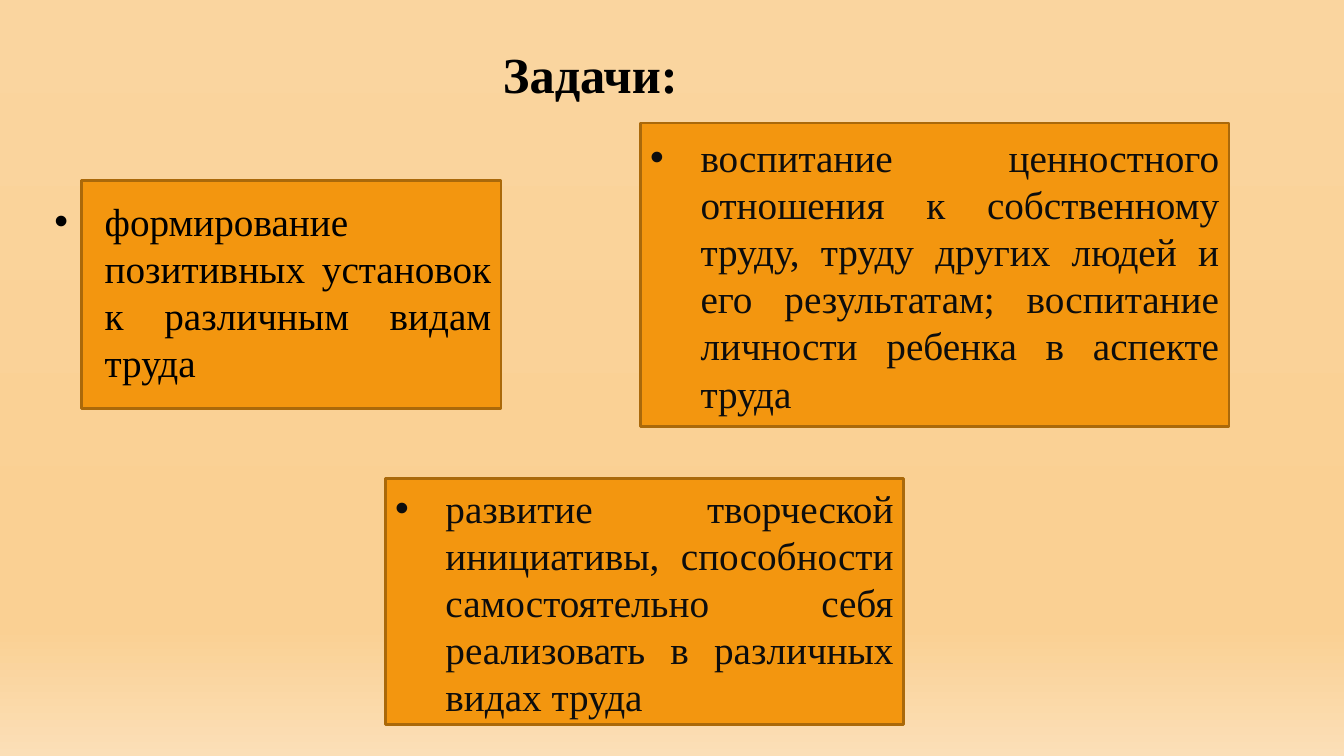
from lxml.etree import SubElement
from pptx import Presentation
from pptx.dml.color import RGBColor
from pptx.enum.shapes import MSO_SHAPE
from pptx.enum.text import MSO_ANCHOR, MSO_AUTO_SIZE, PP_ALIGN
from pptx.oxml.ns import qn
from pptx.util import Inches, Pt


def rgb(value):
    return RGBColor.from_string(value)


class Deck:
    font = "Times New Roman"
    box_fill = "F3960F"
    box_line = "AA690A"
    body_size = 28
    title_size = 36
    indent = 0.5

    def __init__(self, width, height):
        self.prs = Presentation()
        self.prs.slide_width = Inches(width)
        self.prs.slide_height = Inches(height)
        self.s = self.prs.slides.add_slide(self.prs.slide_layouts[6])

    def background(self, stops):
        fill = self.s.background.fill
        fill.gradient()
        fill.gradient_angle = 270
        gs_list = next(self.s.background._cSld.iter(qn("a:gsLst")))
        for gs in list(gs_list):
            gs_list.remove(gs)
        for percent, color in stops:
            gs = SubElement(gs_list, qn("a:gs"), pos=str(percent * 1000))
            SubElement(gs, qn("a:srgbClr"), val=color)

    def box(self, left, top, width, height):
        sp = self.s.shapes.add_shape(
            MSO_SHAPE.RECTANGLE, Inches(left), Inches(top), Inches(width), Inches(height))
        sp.shadow.inherit = False
        sp.fill.solid()
        sp.fill.fore_color.rgb = rgb(self.box_fill)
        sp.line.color.rgb = rgb(self.box_line)
        sp.line.width = Pt(2)
        sp.text_frame.vertical_anchor = MSO_ANCHOR.MIDDLE
        return sp

    def text_box(self, left, top, width, height):
        sp = self.s.shapes.add_textbox(
            Inches(left), Inches(top), Inches(width), Inches(height))
        sp.text_frame.auto_size = MSO_AUTO_SIZE.SHAPE_TO_FIT_TEXT
        return sp

    def run(self, p, text, size, color, bold=False):
        r = p.add_run()
        r.text = text
        r.font.name = self.font
        r.font.size = Pt(size)
        r.font.bold = bold
        r.font.color.rgb = rgb(color)

    def title(self, sp, text):
        tf = sp.text_frame
        tf.word_wrap = True
        self.run(tf.paragraphs[0], text, self.title_size, "000000", True)

    def bullet(self, sp, text, color):
        tf = sp.text_frame
        tf.word_wrap = True
        p = tf.paragraphs[0]
        p.alignment = PP_ALIGN.JUSTIFY
        pPr = p._p.get_or_add_pPr()
        pPr.set("marL", str(Inches(self.indent)))
        pPr.set("indent", str(-Inches(self.indent)))
        SubElement(SubElement(pPr, qn("a:buClr")), qn("a:srgbClr"), val=color)
        SubElement(pPr, qn("a:buFont"), typeface="Arial")
        SubElement(pPr, qn("a:buChar"), char="•")
        self.run(p, text, self.body_size, color)


def main():
    deck = Deck(13.33, 7.5)
    deck.background([(0, "FAD59F"), (74, "FAD093"), (83, "FAD093"), (100, "FBDFB7")])

    deck.box(0.81, 1.79, 4.16, 2.26)
    values = deck.box(6.35, 1.22, 5.84, 3.01)
    deck.bullet(values, "воспитание ценностного отношения к собственному труду, "
                "труду других людей и его результатам; воспитание личности "
                "ребенка в аспекте труда", "0D0D0D")
    initiative = deck.box(3.82, 4.75, 5.14, 2.44)
    deck.bullet(initiative, "развитие творческой инициативы, способности "
                "самостоятельно себя реализовать в различных видах труда", "0D0D0D")

    deck.title(deck.text_box(4.89, 0.38, 3.55, 0.7), "Задачи:")
    attitudes = deck.text_box(0.44, 1.91, 4.53, 2.39)
    deck.bullet(attitudes, "формирование позитивных установок к различным видам труда",
                "000000")

    deck.prs.save("out.pptx")


if __name__ == "__main__":
    main()
